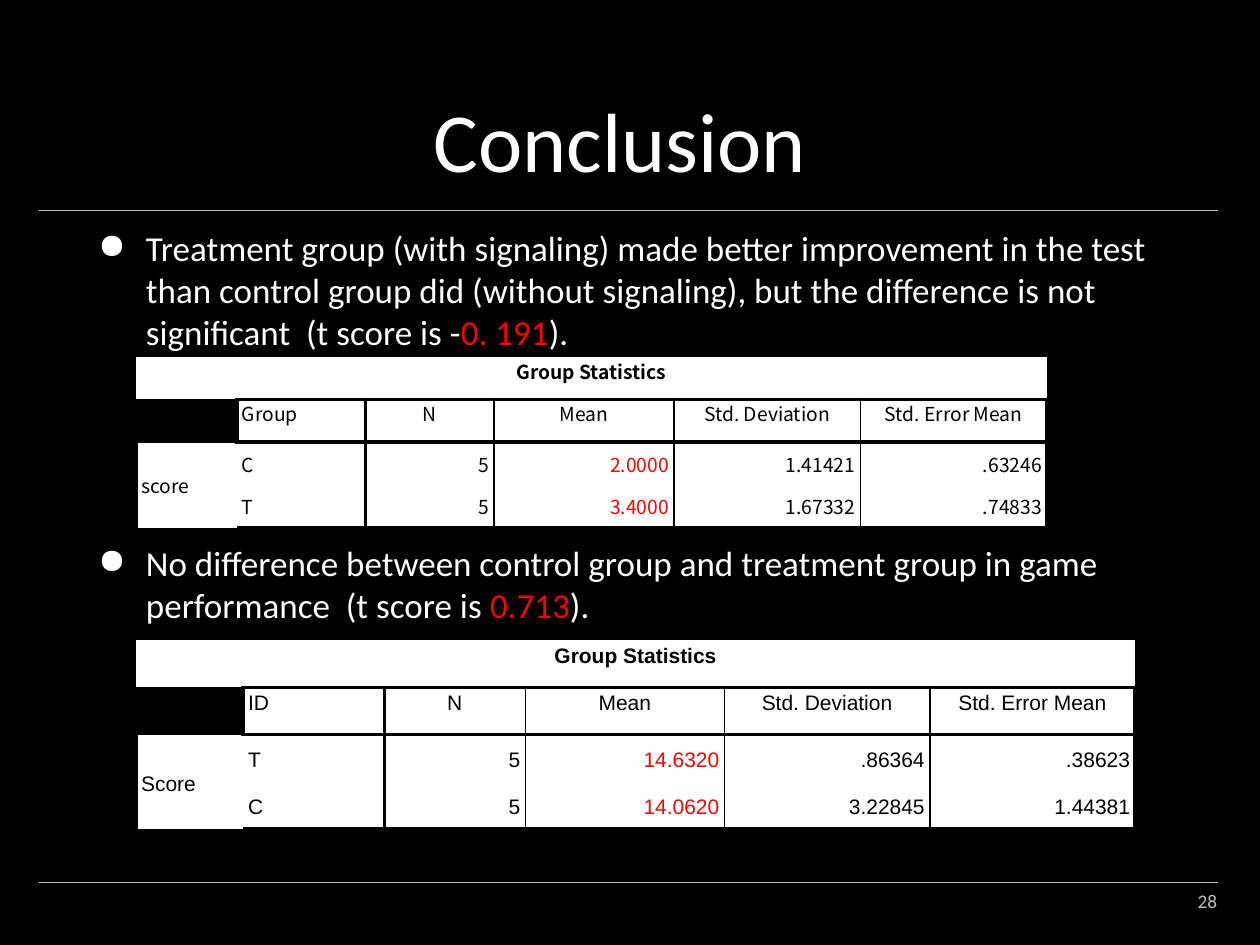
from lxml.etree import SubElement
from pptx import Presentation
from pptx.dml.color import RGBColor
from pptx.enum.shapes import MSO_CONNECTOR
from pptx.enum.text import MSO_ANCHOR, MSO_AUTO_SIZE, PP_ALIGN
from pptx.oxml.ns import qn
from pptx.util import Inches, Pt

COLORS = {"black": "000000", "white": "FFFFFF", "red": "FF0000", "gray": "BFBFBF"}
THIN, THICK = 1, 2.25


def add_run(paragraph, text, color, **font_values):
    run = paragraph.add_run()
    run.text = text
    run.font.color.rgb = RGBColor.from_string(COLORS[color])
    for name, value in font_values.items():
        setattr(run.font, name, value)


def set_border(cell, side, width):
    properties = cell._tc.get_or_add_tcPr()
    line = SubElement(properties, qn(f"a:ln{side}"), w=str(int(Pt(width))))
    if width:
        fill = SubElement(line, qn("a:solidFill"))
        SubElement(fill, qn("a:srgbClr"), val=COLORS["black"])
    else:
        SubElement(line, qn("a:noFill"))


presentation = Presentation()
presentation.slide_width, presentation.slide_height = Inches(10), Inches(7.5)
slide = presentation.slides.add_slide(presentation.slide_layouts[5])
slide.background.fill.solid()
slide.background.fill.fore_color.rgb = RGBColor.from_string(COLORS["black"])

# Rules under the title and above the footer
for rule_top in (1.67, 7):
    rule = slide.shapes.add_connector(
        MSO_CONNECTOR.STRAIGHT, Inches(0.31), Inches(rule_top), Inches(9.67), Inches(rule_top))
    rule.line.color.rgb = RGBColor.from_string(COLORS["gray"])
    rule.line.width = Pt(0.25)
    SubElement(rule._element.spPr, qn("a:effectLst"))

# Title
title = slide.shapes.title
title_place = {"left": 0.7, "top": 0.12, "width": 8.59, "height": 1.43}
for name, value in title_place.items():
    setattr(title, name, Inches(value))
title_format = {"vertical_anchor": MSO_ANCHOR.BOTTOM, "auto_size": MSO_AUTO_SIZE.NONE,
                "word_wrap": True}
for name, value in title_format.items():
    setattr(title.text_frame, name, value)
heading = title.text_frame.paragraphs[0]
heading.alignment = PP_ALIGN.CENTER
add_run(heading, "Conclusion ", "white", name="Calibri", size=Pt(48))

# Findings, with room for a table after the first one
findings = [
    (0, [("Treatment group (with signaling) made better improvement in the test than control "
          "group did (without signaling), but the difference is not significant  (t score is -",
          "white"), ("0. 191", "red"), (").", "white")]),
    (108, [("No difference between control group and treatment group in game performance  "
            "(t score is ", "white"), ("0.713", "red"), (").", "white")]),
]
conclusions = slide.shapes.add_textbox(
    Inches(0.68), Inches(1.75), Inches(8.62), Inches(5.07)).text_frame
conclusions.word_wrap = True
for index, (space_before, parts) in enumerate(findings):
    finding = conclusions.add_paragraph() if index else conclusions.paragraphs[0]
    finding.space_before = Pt(space_before)
    properties = finding._p.get_or_add_pPr()
    properties.set("marL", str(Inches(0.38)))
    properties.set("indent", str(Inches(-0.38)))
    SubElement(properties, qn("a:buChar"), char="●")
    for text, color in parts:
        add_run(finding, text, color, name="Calibri", size=Pt(20))

# Group statistics tables
STATISTICS = ["N", "Mean", "Std. Deviation", "Std. Error Mean"]
groups = [
    {"top": 2.83, "row_height": 0.34, "font": "Noto Sans CJK TC", "size": 11,
     "columns": [0.8, 1.02, 1.02, 1.43, 1.48, 1.48],
     "rows": [["Group Statistics"], ["", "Group", *STATISTICS],
              ["score", "C", "5", "2.0000", "1.41421", ".63246"],
              ["", "T", "5", "3.4000", "1.67332", ".74833"]]},
    {"top": 5.08, "row_height": 0.375, "font": "Arial", "size": 12,
     "columns": [0.85, 1.12, 1.12, 1.58, 1.63, 1.63],
     "rows": [["Group Statistics"], ["", "ID", *STATISTICS],
              ["Score", "T", "5", "14.6320", ".86364", ".38623"],
              ["", "C", "5", "14.0620", "3.22845", "1.44381"]]},
]
cell_format = {"margin_left": Inches(0.04), "margin_right": Inches(0.04),
               "margin_top": 0, "margin_bottom": 0}
# Line widths at the column and row edges
header_edges = [THIN, THICK, THICK, THIN, THIN, THIN, THICK]
value_edges = [THICK, 0, THICK, THIN, THIN, THIN, THICK]
vertical_edges = [[0] * 7, header_edges, value_edges, value_edges]
label_edges = [0, THIN, THIN, 0, THICK]
statistic_edges = [0, THICK, THICK, 0, THICK]

for group in groups:
    table = slide.shapes.add_table(
        4, 6, Inches(1.08), Inches(group["top"]), Inches(sum(group["columns"])),
        Inches(4 * group["row_height"])).table
    table.first_row = table.horz_banding = False
    for column, width in zip(table.columns, group["columns"]):
        column.width = Inches(width)
    for row in table.rows:
        row.height = Inches(group["row_height"])
    table.cell(0, 0).merge(table.cell(0, 5))
    table.cell(2, 0).merge(table.cell(3, 0))

    for row in range(4):
        for column in range(6):
            cell = table.cell(row, column)
            for name, value in cell_format.items():
                setattr(cell, name, value)
            cell.vertical_anchor = MSO_ANCHOR.MIDDLE if row > 1 else MSO_ANCHOR.TOP
            across = statistic_edges if column else label_edges
            down = vertical_edges[row]
            for side, width in zip("LRTB", (down[column], down[column + 1],
                                            across[row], across[row + 1])):
                set_border(cell, side, width)
            cell.fill.solid()
            fill_color = "black" if (row, column) == (1, 0) else "white"
            cell.fill.fore_color.rgb = RGBColor.from_string(COLORS[fill_color])

    for row, texts in enumerate(group["rows"]):
        for column, text in enumerate(texts):
            if not text:
                continue
            entry = table.cell(row, column).text_frame.paragraphs[0]
            entry.line_spacing = Pt(16)
            if row == 0 or (row == 1 and column > 1):
                entry.alignment = PP_ALIGN.CENTER
            elif column > 1:
                entry.alignment = PP_ALIGN.RIGHT
            else:
                entry.alignment = PP_ALIGN.LEFT
            add_run(entry, text, "red" if row > 1 and column == 3 else "black",
                    name=group["font"], size=Pt(group["size"]), bold=row == 0)

# Page number
page_number = slide.shapes.add_textbox(
    Inches(8.83), Inches(6.95), Inches(0.83), Inches(0.4)).text_frame
page_format = {"margin_left": 0, "margin_right": 0, "word_wrap": True,
               "vertical_anchor": MSO_ANCHOR.MIDDLE}
for name, value in page_format.items():
    setattr(page_number, name, value)
page_number.paragraphs[0].alignment = PP_ALIGN.RIGHT
add_run(page_number.paragraphs[0], "28", "gray", name="Calibri", size=Pt(11))

presentation.save("out.pptx")
